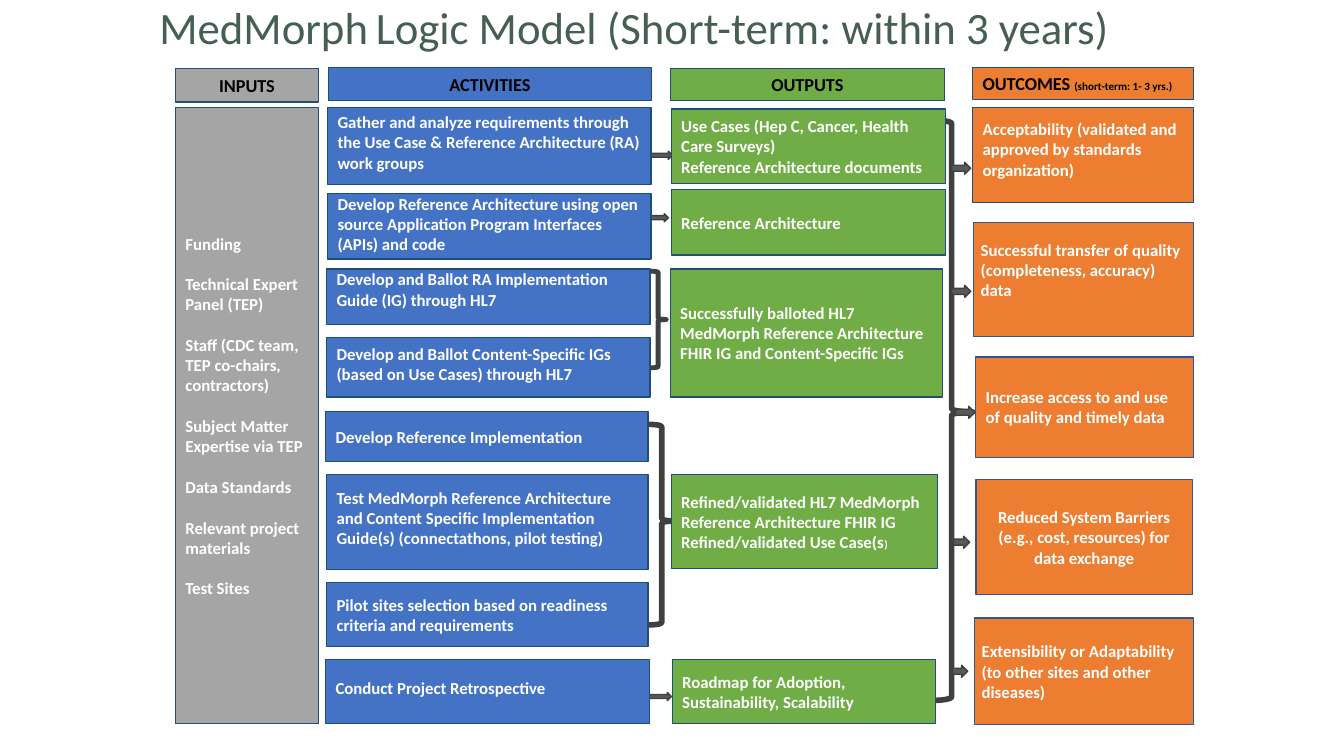
from dataclasses import dataclass

from pptx import Presentation
from pptx.dml.color import RGBColor
from pptx.enum import shapes, text
from pptx.util import Pt

SHAPE = shapes.MSO_SHAPE
LEFT, CENTER = text.PP_ALIGN.LEFT, text.PP_ALIGN.CENTER


@dataclass(frozen=True)
class Theme:
    font: str = "Calibri"
    title: str = "455F51"
    heading: str = "000000"
    body: str = "FFFFFF"
    inputs: str = "A5A5A5"
    activities: str = "4472C4"
    outputs: str = "70AD47"
    outcomes: str = "ED7D31"
    border: str = "1F4E79"
    outcome_border: str = "325491"
    arrow: str = "595959"
    dark: str = "404040"
    title_size: float = 32
    title_gap_size: float = 24
    heading_size: float = 13
    body_size: float = 12
    small_size: float = 7.9
    list_gap: float = 14.65


class LogicModel:
    def __init__(self, slide, theme):
        self.slide, self.theme = slide, theme

    def style(self, paragraph, size, color, bold=True):
        font = paragraph.font
        font.name, font.size, font.bold = self.theme.font, Pt(size), bold
        font.color.rgb = RGBColor.from_string(color)

    def shape(self, kind, place, line, width=1.0, fill=None):
        item = self.slide.shapes.add_shape(kind, *map(Pt, place))
        item.shadow.inherit = False
        item.line.color.rgb = RGBColor.from_string(line)
        item.line.width = Pt(width)
        if fill:
            item.fill.solid()
            item.fill.fore_color.rgb = RGBColor.from_string(fill)
        else:
            item.fill.background()
        return item

    def title(self, place, name, rest):
        holder = self.slide.shapes.title
        holder.left, holder.top, holder.width, holder.height = map(Pt, place)
        frame = holder.text_frame
        frame.auto_size = text.MSO_AUTO_SIZE.NONE
        frame.vertical_anchor = text.MSO_ANCHOR.MIDDLE
        paragraph = frame.paragraphs[0]
        paragraph.alignment = LEFT
        self.style(paragraph, self.theme.title_size, self.theme.title, False)
        for part in (name, " ", rest):
            run = paragraph.add_run()
            run.text = part
            if part == " ":
                run.font.size = Pt(self.theme.title_gap_size)

    def box(self, place, fill, lines, kind=SHAPE.RECTANGLE, border=None,
            line_width=1.0, size=None, color=None, align=LEFT, top=None,
            side=7.2, gap=0, small=""):
        """Filled box; a given top inset replaces vertical centring."""
        theme = self.theme
        item = self.shape(kind, place, border or theme.border, line_width, fill)
        frame = item.text_frame
        frame.word_wrap = True
        frame.margin_left = frame.margin_right = Pt(side)
        frame.margin_top = Pt(3 if top is None else top)
        frame.margin_bottom = Pt(3 if top is None else 0)
        frame.vertical_anchor = (text.MSO_ANCHOR.MIDDLE if top is None
                                 else text.MSO_ANCHOR.TOP)
        for index, line in enumerate(lines):
            paragraph = frame.paragraphs[0] if index == 0 else frame.add_paragraph()
            paragraph.alignment = align
            paragraph.space_before = Pt(gap if index else 0)
            self.style(paragraph, size or theme.body_size, color or theme.body)
            paragraph.add_run().text = line
        if small:
            run = paragraph.add_run()
            run.text = small
            run.font.size = Pt(theme.small_size)

    def heading(self, place, fill, label, line_width=0.75, align=CENTER, small=""):
        self.box(place, fill, [label], line_width=line_width, align=align,
                 size=self.theme.heading_size, color=self.theme.heading, small=small)

    def arrow(self, left, top, width, height):
        self.shape(SHAPE.RIGHT_ARROW, (left, top, width, height),
                   self.theme.dark, fill=self.theme.arrow)

    def brace(self, place, tip, width):
        item = self.shape(SHAPE.RIGHT_BRACE, place, self.theme.dark, width)
        item.adjustments[0], item.adjustments[1] = 0.083, tip


def build(model):
    theme = model.theme
    model.title((106.6, 6.5, 746.6, 24.5), "MedMorph",
                "Logic Model (Short-term: within 3 years)")

    # Braces and arrows, behind the boxes
    for place, tip, width in [
        ((664.6, 85.7, 30.2, 414.7), 0.503, 4),
        ((463, 303.1, 19.4, 143.3), 0.482, 4),
        ((464.4, 193.7, 11.5, 69.1), 0.5, 3.5),
    ]:
        model.brace(place, tip, width)
    for left, top in [(452.9, 108), (450, 152.6), (452.2, 494.6)]:
        model.arrow(left, top, 27.4, 5.8)
    for left, top, width in [(679.7, 115.9, 13.7), (679.7, 203.8, 13.7),
                             (682.6, 290.2, 13.7), (681.1, 383, 11.5),
                             (680.4, 475.2, 10.8)]:
        model.arrow(left, top, width, 8.6)

    # Column headings
    model.heading((125.3, 49, 102.2, 23.8), theme.inputs, "INPUTS", line_width=1)
    model.heading((234.7, 48.2, 230.4, 23.8), theme.activities, "ACTIVITIES")
    model.heading((478.8, 49, 195.8, 23), theme.outputs, "OUTPUTS")
    model.heading((694.8, 48.2, 157.7, 23), theme.outcomes, "OUTCOMES ",
                  align=LEFT, small="(short-term: 1- 3 yrs.)")

    # Inputs
    model.box((125.3, 77, 102.2, 439.9), theme.inputs, [
        "Funding", "Technical Expert Panel (TEP)",
        "Staff (CDC team, TEP co-chairs, contractors)",
        "Subject Matter Expertise via TEP", "Data Standards",
        "Relevant project materials", "Test Sites",
    ], gap=theme.list_gap)

    # Activities: place, top inset, wording
    for place, top, wording in [
        ((234, 77, 231.1, 54.7), 3, "Gather and analyze requirements through the "
         "Use Case & Reference Architecture (RA) work groups"),
        ((234, 138.2, 231.1, 46.8), 0, "Develop Reference Architecture using open "
         "source Application Program Interfaces (APIs) and code"),
        ((233.3, 192.2, 231.1, 39.6), 0, "Develop and Ballot RA Implementation "
         "Guide (IG) through HL7"),
        ((233.3, 241.2, 231.1, 42.5), 4.5, "Develop and Ballot Content-Specific IGs "
         "(based on Use Cases) through HL7"),
        ((232.6, 293.8, 230.4, 36), None, "Develop Reference Implementation"),
        ((233.3, 339.1, 229.7, 67.7), 9, "Test MedMorph Reference Architecture and "
         "Content Specific Implementation Guide(s) (connectathons, pilot testing)"),
        ((233.3, 416.2, 229.7, 45.4), None, "Pilot sites selection based on "
         "readiness criteria and requirements"),
        ((232.6, 470.9, 231.1, 46.1), 13.5, "Conduct Project Retrospective"),
    ]:
        model.box(place, theme.activities, [wording], top=top,
                  kind=SHAPE.FLOWCHART_PROCESS)

    # Outputs: place, wording, small ending
    for place, wording, small in [
        ((479.5, 77.8, 195.8, 53.3), ["Use Cases (Hep C, Cancer, Health Care Surveys)",
                                      "Reference Architecture documents"], ""),
        ((479.5, 135.4, 195.8, 46.8), ["Reference Architecture"], ""),
        ((478.8, 192.2, 194.4, 91.4), ["Successfully balloted HL7 MedMorph Reference "
         "Architecture FHIR IG and Content-Specific IGs"], ""),
        ((479.5, 339.1, 190.1, 67), ["Refined/validated HL7 MedMorph Reference "
         "Architecture FHIR IG", "Refined/validated Use Case(s"], ")"),
        ((480.2, 470.9, 187.9, 46.1), ["Roadmap for Adoption, Sustainability, "
                                       "Scalability"], ""),
    ]:
        model.box(place, theme.outputs, wording, small=small)

    # Outcomes: place, border, top inset, side inset, alignment, wording
    edge = theme.outcome_border
    for place, border, top, side, align, wording in [
        ((694.8, 77, 157.7, 67.7), theme.border, 8, 7.2, LEFT,
         "Acceptability (validated and approved by standards organization)"),
        ((695.5, 159.1, 157, 81.4), edge, 12, 5, LEFT,
         "Successful transfer of quality (completeness, accuracy) data"),
        ((697, 254.9, 155.5, 72), edge, None, 7.2, LEFT,
         "Increase access to and use of quality and timely data"),
        ((697, 342.7, 154.8, 82.1), edge, None, 5, CENTER,
         "Reduced System Barriers (e.g., cost, resources) for data exchange"),
        ((696.2, 441.4, 156.2, 76.3), edge, None, 5, LEFT,
         "Extensibility or Adaptability (to other sites and other diseases)"),
    ]:
        model.box(place, theme.outcomes, [wording], border=border, top=top,
                  side=side, align=align)


def main():
    deck = Presentation()
    deck.slide_width, deck.slide_height = Pt(960), Pt(540)
    build(LogicModel(deck.slides.add_slide(deck.slide_layouts[5]), Theme()))
    deck.save("out.pptx")


if __name__ == "__main__":
    main()
